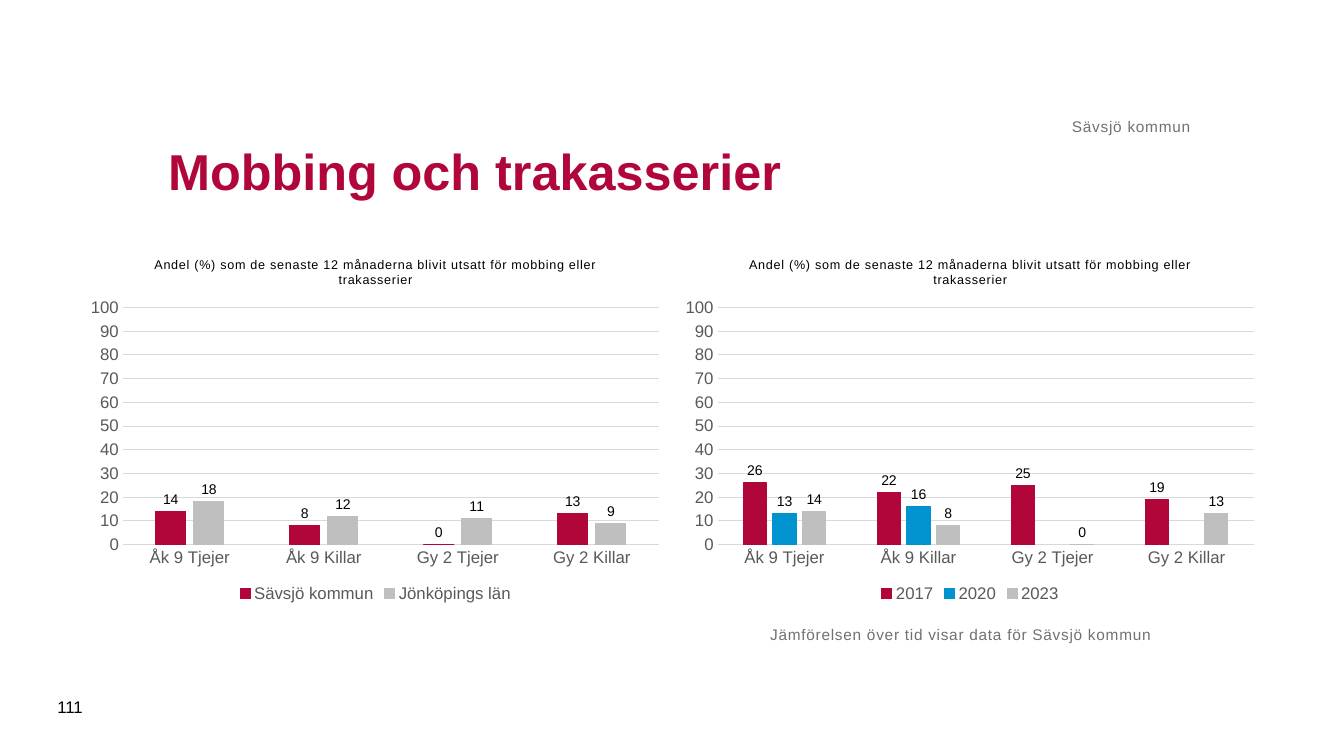
from lxml import etree
from pptx import Presentation
from pptx.chart.data import CategoryChartData
from pptx.dml.color import RGBColor
from pptx.enum.chart import XL_CHART_TYPE, XL_LABEL_POSITION, XL_LEGEND_POSITION, XL_TICK_MARK
from pptx.enum.text import MSO_ANCHOR, PP_ALIGN
from pptx.oxml.ns import qn
from pptx.util import Inches, Pt

RED = RGBColor(0xB1, 0x06, 0x3A)
BLUE = RGBColor(0x00, 0x93, 0xD0)
SILVER = RGBColor(0xBF, 0xBF, 0xBF)
PALE = RGBColor(0xD9, 0xD9, 0xD9)
GREY = RGBColor(0x71, 0x71, 0x71)
DARK = RGBColor(0x59, 0x59, 0x59)
BLACK = RGBColor(0, 0, 0)

COLUMN = XL_CHART_TYPE.COLUMN_CLUSTERED
BELOW = XL_LEGEND_POSITION.BOTTOM
OUTSIDE = XL_LABEL_POSITION.OUTSIDE_END
NO_TICK = XL_TICK_MARK.NONE
TOP, MIDDLE, BOTTOM = MSO_ANCHOR.TOP, MSO_ANCHOR.MIDDLE, MSO_ANCHOR.BOTTOM
LEFT, RIGHT = PP_ALIGN.LEFT, PP_ALIGN.RIGHT

CELL = Inches(0.1)  # side of one square of the grid
WIDE, HIGH = 133.33, 75
NUMBER = "#,##0;#,##0"
PLOT = {"x": 0.073, "y": 0.18, "w": 0.906, "h": 0.65}

GROUPS = ["Åk 9 Tjejer", "Åk 9 Killar", "Gy 2 Tjejer", "Gy 2 Killar"]
HEADING = "Andel (%) som de senaste 12 månaderna blivit utsatt för mobbing eller trakasserier"
REGION = [
    ("Sävsjö kommun", [14, 8, 0, 13], RED),
    ("Jönköpings län", [18, 12, 11, 9], SILVER),
]
YEARS = [
    ("2017", [26, 22, 25, 19], RED),
    ("2020", [13, 16, None, None], BLUE),
    ("2023", [14, 8, 0, 13], SILVER),
]


def grid(*cells):
    return [round(cell * CELL) for cell in cells]


def style(font, size, color, bold=False):
    font.name = "Arial"
    font.size = Pt(size)
    font.bold = bold
    font.color.rgb = color


def write(par, text, size=12, color=BLACK, bold=False, space=0, align=None):
    """Add one formatted run; space is the letter spacing in points."""
    par.alignment = align
    run = par.add_run()
    run.text = text
    style(run.font, size, color, bold)
    if space:
        run.font._element.set("spc", str(round(space * 100)))


def place(chart):
    """Fix the inner plot area at the shares given in PLOT."""
    area = chart._chartSpace.chart.plotArea
    for old in area.findall(qn("c:layout")):
        area.remove(old)
    layout = etree.Element(qn("c:layout"))
    manual = etree.SubElement(layout, qn("c:manualLayout"))
    parts = {"layoutTarget": "inner", "xMode": "edge", "yMode": "edge", **PLOT}
    for name, value in parts.items():
        etree.SubElement(manual, qn("c:" + name)).set("val", str(value))
    area.insert(0, layout)


class Board:
    def __init__(self, deck):
        self.slide = deck.slides.add_slide(deck.slide_layouts[6])

    def text(self, text, at, anchor=TOP, inset=True, **form):
        frame = self.slide.shapes.add_textbox(*grid(*at)).text_frame
        frame.word_wrap = True
        frame.vertical_anchor = anchor
        if not inset:
            frame.margin_left = frame.margin_right = 0
            frame.margin_top = frame.margin_bottom = 0
        write(frame.paragraphs[0], text, **form)

    def chart(self, rows, at):
        data = CategoryChartData(number_format="0")
        data.categories = GROUPS
        for name, values, _ in rows:
            data.add_series(name, values)
        chart = self.slide.shapes.add_chart(COLUMN, *grid(*at), data).chart
        style(chart.font, 10, BLACK)
        chart.has_title = True
        write(chart.chart_title.text_frame.paragraphs[0], HEADING, size=9, space=0.5)
        chart.has_legend = True
        chart.legend.position = BELOW
        chart.legend.include_in_layout = False
        style(chart.legend.font, 12, DARK)
        self.axes(chart)
        self.bars(chart.plots[0], [color for _, _, color in rows])
        place(chart)

    def axes(self, chart):
        for axis in (chart.category_axis, chart.value_axis):
            axis.major_tick_mark = axis.minor_tick_mark = NO_TICK
            style(axis.tick_labels.font, 12, DARK)
        level = chart.value_axis
        level.minimum_scale, level.maximum_scale, level.major_unit = 0, 100, 10
        level.tick_labels.number_format = NUMBER
        level.tick_labels.number_format_is_linked = False
        level.format.line.fill.background()
        for line in (chart.category_axis.format.line, level.major_gridlines.format.line):
            line.color.rgb = PALE
            line.width = Pt(0.75)

    def bars(self, plot, colors):
        plot.gap_width, plot.overlap = 219, -27
        plot.vary_by_categories = False
        for series, color in zip(plot.series, colors):
            series.format.fill.solid()
            series.format.fill.fore_color.rgb = color
            series.format.line.color.rgb = color
            series.format.line.width = Pt(0.75)
            labels = series.data_labels
            labels.show_value = True
            labels.position = OUTSIDE
            labels.number_format = NUMBER
            labels.number_format_is_linked = False
            style(labels.font, 10, BLACK)


def main():
    deck = Presentation()
    deck.slide_width, deck.slide_height = grid(WIDE, HIGH)
    board = Board(deck)
    for left, rows in ((7.9, REGION), (66.9, YEARS)):
        board.chart(rows, (left, 24, 58.7, 36.2))
    note = {"size": 11, "color": GREY, "space": 0.5, "inset": False}
    board.text("Mobbing och trakasserier", (15.7, 9.8, 102.4, 14.2), MIDDLE,
               size=36, color=RED, bold=True)
    board.text("Jämförelsen över tid visar data för Sävsjö kommun",
               (76.4, 62, 53.1, 9.4), align=LEFT, **note)
    board.text("Sävsjö kommun", (15.7, 6.2, 102.4, 7.3), BOTTOM, align=RIGHT, **note)
    board.text("111", (4.7, 68.1, 5.7, 4), MIDDLE)
    deck.save("out.pptx")


if __name__ == "__main__":
    main()
